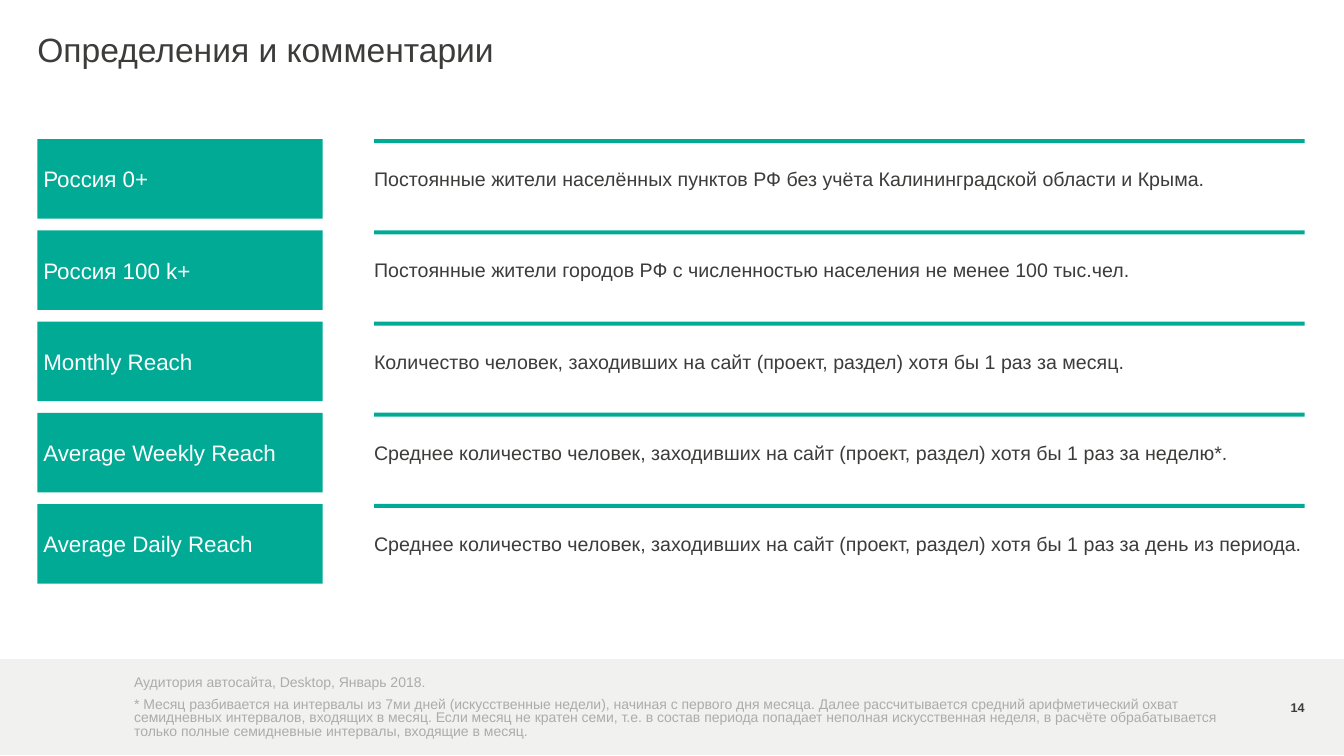
from pptx import Presentation
from pptx.dml.color import RGBColor
from pptx.enum.shapes import MSO_SHAPE
from pptx.enum.text import MSO_ANCHOR, MSO_AUTO_SIZE, PP_ALIGN
from pptx.util import Inches, Pt

GREEN, DARK, GREY, PALE, WHITE = "00AA95", "3C3C3B", "ACACAB", "F1F1F0", "FFFFFF"

deck = Presentation()
deck.slide_width, deck.slide_height = Inches(13.33), Inches(7.5)
slide = deck.slides.add_slide(deck.slide_layouts[5])
shapes = slide.shapes


def block(x, y, w, h, color):
    """Add a plain filled rectangle."""
    box = shapes.add_shape(MSO_SHAPE.RECTANGLE, Inches(x), Inches(y), Inches(w), Inches(h))
    box.shadow.inherit = False
    box.fill.solid()
    box.fill.fore_color.rgb = RGBColor.from_string(color)
    box.line.fill.background()
    return box


def write(box, text, size, color, anchor=MSO_ANCHOR.TOP, left=0):
    """Put one formatted paragraph into a shape and return it."""
    frame = box.text_frame
    frame.text = text
    frame.word_wrap = True
    frame.auto_size = MSO_AUTO_SIZE.NONE
    frame.vertical_anchor = anchor
    frame.margin_left = Inches(left)
    frame.margin_top = frame.margin_right = frame.margin_bottom = 0
    para = frame.paragraphs[0]
    para.alignment = PP_ALIGN.LEFT
    para.font.name = "Arial"
    para.font.size = Pt(size)
    para.font.color.rgb = RGBColor.from_string(color)
    return para


# Footer band
block(0, 6.54, 13.33, 0.95, PALE)

# Title
title = shapes.title
title.left, title.top = Inches(0.37), Inches(0.33)
title.width, title.height = Inches(12.56), Inches(0.58)
write(title, "Определения и комментарии", 24, DARK).line_spacing = Pt(26)

# Terms and their definitions
terms = [
    ("Россия 0+",
     "Постоянные жители населённых пунктов РФ без учёта Калининградской области и Крыма."),
    ("Россия 100 k+",
     "Постоянные жители городов РФ с численностью населения не менее 100 тыс.чел."),
    ("Monthly Reach",
     "Количество человек, заходивших на сайт (проект, раздел) хотя бы 1 раз за месяц."),
    ("Average Weekly Reach",
     "Среднее количество человек, заходивших на сайт (проект, раздел) хотя бы 1 раз за неделю*."),
    ("Average Daily Reach",
     "Среднее количество человек, заходивших на сайт (проект, раздел) хотя бы 1 раз за день "
     "из периода."),
]
first, last, high = 1.38, 5.0, 0.79
step = (last - first) / (len(terms) - 1)
for row, (term, meaning) in enumerate(terms):
    top = first + row * step
    write(block(0.37, top, 2.83, high, GREEN), term, 16, WHITE, MSO_ANCHOR.MIDDLE, 0.06)
    block(3.71, top, 9.23, 0.04, GREEN)
    box = shapes.add_textbox(Inches(3.71), Inches(top), Inches(9.23), Inches(high))
    write(box, meaning, 14, DARK, MSO_ANCHOR.MIDDLE)

# Source and footnote
source = shapes.add_textbox(Inches(1.33), Inches(6.68), Inches(11.02), Inches(0.18))
write(source, "Аудитория автосайта, Desktop, Январь 2018.", 10, GREY)
note = shapes.add_textbox(Inches(1.33), Inches(6.93), Inches(11.02), Inches(0.42))
write(
    note,
    "* Месяц разбивается на интервалы из 7ми дней (искусственные недели), начиная с первого "
    "дня месяца. Далее рассчитывается средний арифметический охват семидневных интервалов, "
    "входящих в месяц. Если месяц не кратен семи, т.е. в состав периода попадает неполная "
    "искусственная неделя, в расчёте обрабатывается только полные семидневные интервалы, "
    "входящие в месяц.",
    10, GREY,
).line_spacing = 0.8

# Page number
page = shapes.add_textbox(Inches(12.49), Inches(6.93), Inches(0.45), Inches(0.18))
para = write(page, "14", 9, DARK, MSO_ANCHOR.MIDDLE)
para.alignment = PP_ALIGN.RIGHT
para.font.bold = True

deck.save("out.pptx")
